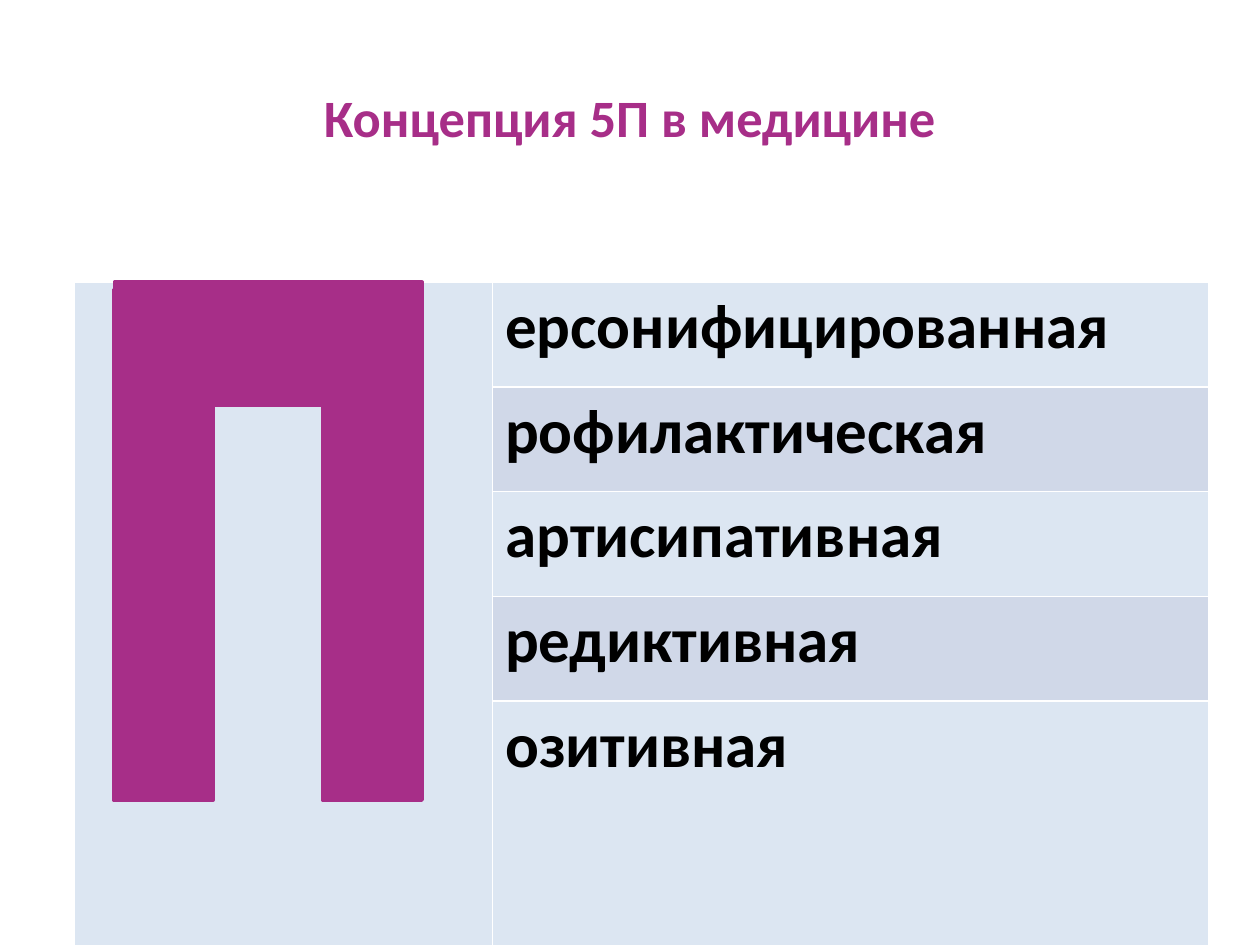
from pptx import Presentation
from pptx.dml.color import RGBColor as RGB
from pptx.enum.shapes import MSO_SHAPE as Shape
from pptx.enum.text import MSO_ANCHOR as Anchor, PP_ALIGN as Align
from pptx.util import Cm, Pt

PLUM = RGB(0xA7, 0x2E, 0x88)
BLACK = RGB(0, 0, 0)
PALE = RGB(0xDC, 0xE6, 0xF2)
GREY = RGB(0xD0, 0xD8, 0xE8)

WORDS = ["ерсонифицированная", "рофилактическая", "артисипативная",
         "редиктивная", "озитивная"]


def style(para, size, color):
    form = {"name": "Calibri", "size": Pt(size), "bold": True}
    for key, val in form.items():
        setattr(para.font, key, val)
    para.font.color.rgb = color


def paint(item, color):
    item.fill.solid()
    item.fill.fore_color.rgb = color


deck = Presentation()
deck.slide_width, deck.slide_height = Cm(25.4), Cm(19.05)
slide = deck.slides.add_slide(deck.slide_layouts[5])

# Title
title = slide.shapes.title
place = {"left": Cm(1.27), "top": Cm(0.76), "width": Cm(22.86), "height": Cm(3.18)}
for key, val in place.items():
    setattr(title, key, val)
title.text_frame.text = "Концепция 5П в медицине"
title.text_frame.vertical_anchor = Anchor.MIDDLE
para = title.text_frame.paragraphs[0]
para.alignment = Align.CENTER
style(para, 30, PLUM)

# Table: one tall cell for the shared letter, one row per word ending
frame = slide.shapes.add_table(len(WORDS), 2, Cm(1.5), Cm(5.69), Cm(22.86), Cm(13.41))
table = frame.table
for col, width in zip(table.columns, (8.43, 14.43)):
    col.width = Cm(width)
for i, word in enumerate(WORDS):
    last = i == len(WORDS) - 1
    table.rows[i].height = Cm(4.97 if last else 2.11)
    cell = table.cell(i, 1)
    cell.text = word
    style(cell.text_frame.paragraphs[0], 36, BLACK)
    paint(cell, GREY if i % 2 else PALE)
letter = table.cell(0, 0)
letter.merge(table.cell(len(WORDS) - 1, 0))
paint(letter, PALE)

# Big letter: two legs and a top bar
BARS = [(2.29, 5.84, 2.01, 10.29), (6.5, 5.84, 2.01, 10.29), (2.31, 5.69, 6.2, 2.49)]
for box in BARS:
    bar = slide.shapes.add_shape(Shape.RECTANGLE, *map(Cm, box))
    bar.shadow.inherit = False
    paint(bar, PLUM)
    bar.line.color.rgb = PLUM
    bar.line.width = Pt(2)

deck.save("out.pptx")
